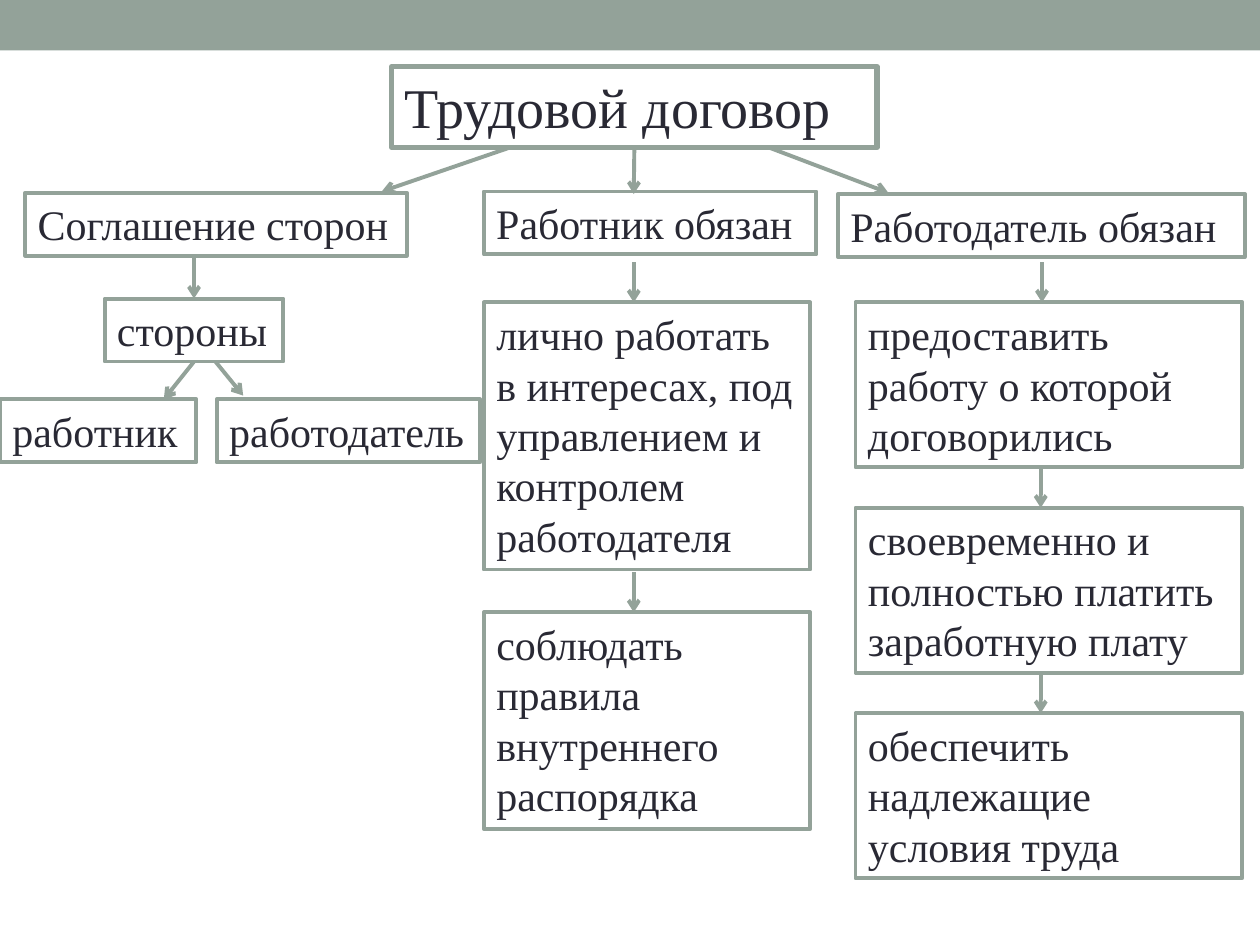
from dataclasses import dataclass
from typing import Optional

import pptx
import pptx.dml.color
import pptx.enum.shapes
import pptx.enum.text
import pptx.oxml.ns
import pptx.util
from lxml import etree

Inches = pptx.util.Inches
COLORS = {"sage": "93A299", "ink": "292934"}
FONT = "Times New Roman"
TOP, BOTTOM = 0, 2


@dataclass
class Box:
    key: str
    text: str
    left: float
    top: float
    width: float
    height: float = 0.5
    size: int = 24
    border: float = 2.25


@dataclass
class Arrow:
    start: tuple[float, float]
    end: tuple[float, float]
    source: Optional[str] = None  # box whose bottom middle it leaves
    target: Optional[str] = None  # box whose top middle it meets


MID, MID_WIDTH = 3.84, 2.59
RIGHT, RIGHT_WIDTH = 6.79, 3.07
DUTY_TOP, DUTY_STEP, DUTY_HEIGHT = 2.4, 1.63, 1.31
DUTIES = [
    "предоставить работу о которой договорились",
    "своевременно и полностью платить заработную плату",
    "обеспечить надлежащие условия труда",
]

BOXES = [
    Box("title", "Трудовой договор", 3.11, 0.53, 3.85, 0.64, 32, 3),
    Box("accord", "Соглашение сторон", 0.2, 1.53, 3.03),
    Box("worker", "Работник обязан", MID, 1.52, 2.64),
    Box("boss", "Работодатель обязан", 6.65, 1.54, 3.23),
    Box("rules", "соблюдать правила внутреннего распорядка",
        MID, 4.86, MID_WIDTH, 1.72),
    Box("labor", "лично работать в интересах, под управлением и контролем "
        "работодателя", MID, DUTY_TOP, MID_WIDTH, 2.12),
    *[Box(f"duty {row}", text, RIGHT, DUTY_TOP + row * DUTY_STEP,
          RIGHT_WIDTH, DUTY_HEIGHT) for row, text in enumerate(DUTIES)],
    Box("sides", "стороны", 0.83, 2.37, 1.42),
    Box("side 1", "работник", 0, 3.17, 1.56),
    Box("side 2", "работодатель", 1.72, 3.17, 2.09),
]


def drop(x: float, top: float, length: float = 0.32, **joins: str) -> Arrow:
    """Make an arrow that points straight down."""
    return Arrow((x, top), (x, top + length), **joins)


ARROWS = [
    drop(1.54, 2.05, target="sides"),
    Arrow((1.54, 2.87), (1.3, 3.17), source="sides"),
    Arrow((1.71, 2.87), (1.93, 3.14)),
    drop(5.03, 1.17, 0.37, source="title"),
    drop(5.03, 2.08),
    drop(5.03, 4.54),
    drop(8.27, 2.08),
    drop(8.26, 3.71),
    drop(8.26, 5.34),
    Arrow((4.05, 1.17), (3.03, 1.52)),
    Arrow((6.1, 1.17), (7.05, 1.53)),
]


def tint(name: str) -> pptx.dml.color.RGBColor:
    return pptx.dml.color.RGBColor.from_string(COLORS[name])


def write(frame, text: str, *, size: int, color: str = "ink") -> None:
    frame.word_wrap = True
    frame.auto_size = pptx.enum.text.MSO_AUTO_SIZE.SHAPE_TO_FIT_TEXT
    run = frame.paragraphs[0].add_run()
    run.text = text
    run.font.name = FONT
    run.font.size = pptx.util.Pt(size)
    run.font.color.rgb = tint(color)


def stroke(line, width: float) -> None:
    line.color.rgb = tint("sage")
    line.width = pptx.util.Pt(width)


def draw_bar(slide) -> None:
    bar = slide.shapes.add_shape(
        pptx.enum.shapes.MSO_SHAPE.RECTANGLE,
        0, 0, Inches(10), Inches(0.4))
    bar.shadow.inherit = False
    bar.fill.solid()
    bar.fill.fore_color.rgb = tint("sage")
    bar.line.fill.background()


def draw_box(slide, box: Box):
    shape = slide.shapes.add_textbox(
        Inches(box.left), Inches(box.top),
        Inches(box.width), Inches(box.height))
    stroke(shape.line, box.border)
    write(shape.text_frame, box.text, size=box.size)
    return shape


def draw_arrow(slide, arrow: Arrow, shapes: dict) -> None:
    link = slide.shapes.add_connector(
        pptx.enum.shapes.MSO_CONNECTOR.STRAIGHT,
        *[Inches(value) for value in arrow.start + arrow.end])
    if arrow.source:
        link.begin_connect(shapes[arrow.source], BOTTOM)
    if arrow.target:
        link.end_connect(shapes[arrow.target], TOP)
    stroke(link.line, 2.25)
    qn = pptx.oxml.ns.qn
    props = link.element.find(qn("p:spPr"))
    etree.SubElement(props.find(qn("a:ln")), qn("a:tailEnd"), type="arrow")
    etree.SubElement(props, qn("a:effectLst"))


def main() -> None:
    deck = pptx.Presentation()
    deck.slide_width, deck.slide_height = Inches(10), Inches(7.5)
    slide = deck.slides.add_slide(deck.slide_layouts[6])
    draw_bar(slide)
    shapes = {box.key: draw_box(slide, box) for box in BOXES}
    for arrow in ARROWS:
        draw_arrow(slide, arrow, shapes)
    deck.save("out.pptx")


if __name__ == "__main__":
    main()
